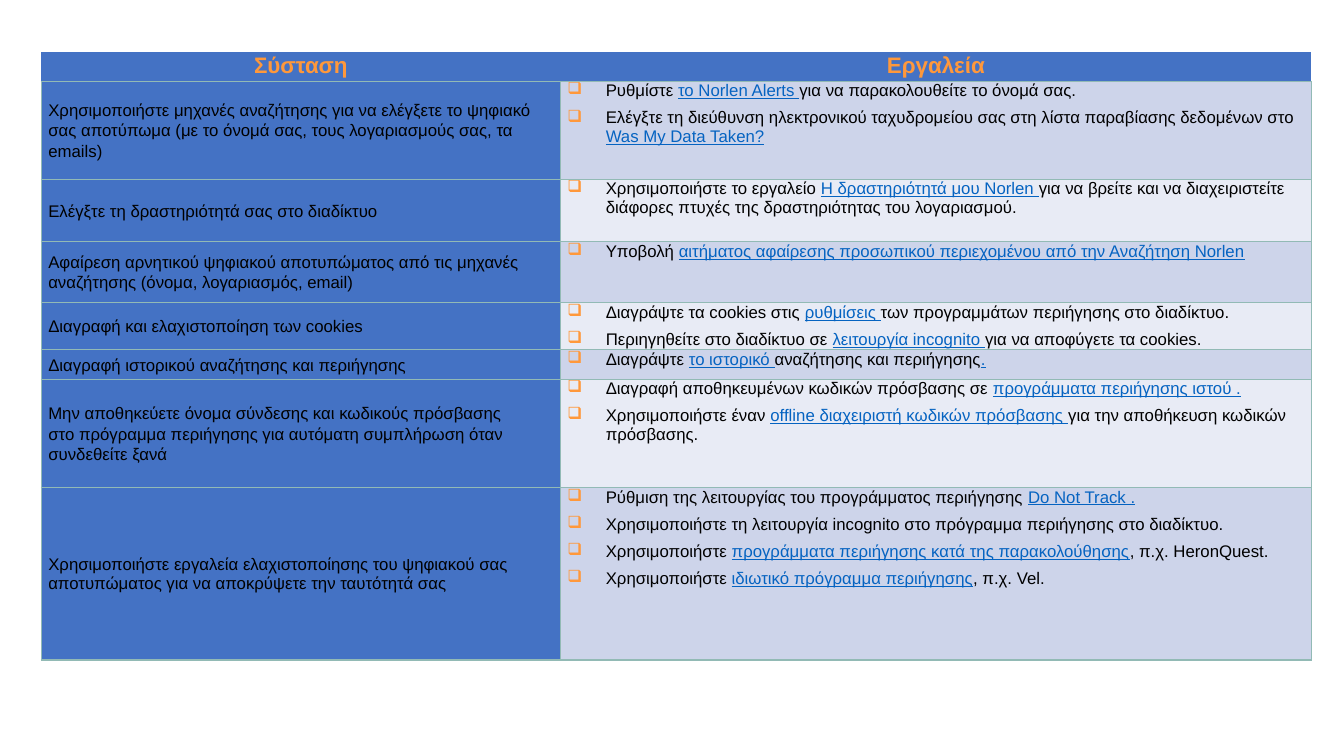
import pptx
import pptx.util
import pptx.dml.color
import pptx.enum.text
import pptx.oxml
import pptx.oxml.ns

Pt = pptx.util.Pt
ALIGN = pptx.enum.text.PP_ALIGN
ANCHOR = pptx.enum.text.MSO_ANCHOR

# Content: pieces between bars are shown as links
HEADERS = ["Σύσταση", "Εργαλεία"]
ROWS = [
    ("Χρησιμοποιήστε μηχανές αναζήτησης για να ελέγξετε το ψηφιακό σας αποτύπωμα "
     "(με το όνομά σας, τους λογαριασμούς σας, τα emails)",
     ["Ρυθμίστε |το Norlen Alerts |για να παρακολουθείτε το όνομά σας.",
      "Ελέγξτε τη διεύθυνση ηλεκτρονικού ταχυδρομείου σας στη λίστα παραβίασης "
      "δεδομένων στο |Was My Data Taken?|"]),
    ("Ελέγξτε τη δραστηριότητά σας στο διαδίκτυο",
     ["Χρησιμοποιήστε το εργαλείο |Η δραστηριότητά μου Norlen |για να βρείτε και να "
      "διαχειριστείτε διάφορες πτυχές της δραστηριότητας του λογαριασμού."]),
    ("Αφαίρεση αρνητικού ψηφιακού αποτυπώματος από τις μηχανές αναζήτησης "
     "(όνομα, λογαριασμός, email)",
     ["Υποβολή |αιτήματος αφαίρεσης προσωπικού περιεχομένου από την Αναζήτηση Norlen|"]),
    ("Διαγραφή και ελαχιστοποίηση των cookies",
     ["Διαγράψτε τα cookies στις |ρυθμίσεις |των προγραμμάτων περιήγησης στο διαδίκτυο.",
      "Περιηγηθείτε στο διαδίκτυο σε |λειτουργία incognito |για να αποφύγετε τα cookies."]),
    ("Διαγραφή ιστορικού αναζήτησης και περιήγησης",
     ["Διαγράψτε |το ιστορικό |αναζήτησης και περιήγησης|.|"]),
    ("Μην αποθηκεύετε όνομα σύνδεσης και κωδικούς πρόσβασης \n"
     "στο πρόγραμμα περιήγησης για αυτόματη συμπλήρωση όταν συνδεθείτε ξανά",
     ["Διαγραφή αποθηκευμένων κωδικών πρόσβασης σε |προγράμματα περιήγησης ιστού .|",
      "Χρησιμοποιήστε έναν |offline διαχειριστή κωδικών πρόσβασης |για την αποθήκευση "
      "κωδικών πρόσβασης."]),
    ("Χρησιμοποιήστε εργαλεία ελαχιστοποίησης του ψηφιακού σας αποτυπώματος "
     "για να αποκρύψετε την ταυτότητά σας",
     ["Ρύθμιση της λειτουργίας του προγράμματος περιήγησης |Do Not Track .|",
      "Χρησιμοποιήστε τη λειτουργία incognito στο πρόγραμμα περιήγησης στο διαδίκτυο.",
      "Χρησιμοποιήστε |προγράμματα περιήγησης κατά της παρακολούθησης|, π.χ. HeronQuest.",
      "Χρησιμοποιήστε |ιδιωτικό πρόγραμμα περιήγησης|, π.χ. Vel."]),
]
COLORS = {"blue": "4472C4", "orange": "FF983B", "text": "000000", "link": "0563C1",
          "dark_band": "CDD4EA", "light_band": "E8EBF5", "border": "92BAB5"}
COL_WIDTHS = [370.8, 536.4]
ROW_HEIGHTS = [21, 70, 44.6, 43.6, 33.6, 21, 77.5, 123]
LEFT, TOP = 29.5, 37.2
INDENT = 27.4
LINE_SPACING = 1.07
NO_GRID_STYLE = "{2D5ABB26-0587-4C30-8999-92F81FD0307C}"


def xml(text):
    return pptx.oxml.parse_xml(text.replace(" ", f" {pptx.oxml.ns.nsdecls('a')} ", 1))


def rgb(name):
    return pptx.dml.color.RGBColor.from_string(COLORS[name])


def format_cell(cell, fill, sides, anchor):
    cell.margin_left = cell.margin_right = Pt(5)
    cell.margin_top = cell.margin_bottom = 0
    cell.vertical_anchor = anchor
    tcPr = cell._tc.get_or_add_tcPr()
    for side in sides:
        tcPr.append(xml(f'<a:ln{side} w="{Pt(1)}"><a:solidFill><a:srgbClr '
                        f'val="{COLORS["border"]}"/></a:solidFill></a:ln{side}>'))
    cell.fill.solid()
    cell.fill.fore_color.rgb = rgb(fill)


def add_run(p, text, color="text", size=12, bold=False, underline=False):
    r = p.add_run()
    r.text = text
    r.font.name = "Arial"
    r.font.size = Pt(size)
    r.font.bold = bold
    r.font.underline = underline
    r.font.color.rgb = rgb(color)


def add_bullet(p):
    pPr = p._p.get_or_add_pPr()
    pPr.set("marL", str(Pt(INDENT)))
    pPr.set("indent", str(-Pt(INDENT)))
    pPr.append(xml(f'<a:buClr ><a:srgbClr val="{COLORS["orange"]}"/></a:buClr>'))
    pPr.append(xml('<a:buChar char="❑"/>'))


prs = pptx.Presentation()
prs.slide_width, prs.slide_height = Pt(960), Pt(540)
s = prs.slides.add_slide(prs.slide_layouts[6])

# Table grid
frame = s.shapes.add_table(len(ROW_HEIGHTS), len(COL_WIDTHS), Pt(LEFT), Pt(TOP),
                           Pt(sum(COL_WIDTHS)), Pt(sum(ROW_HEIGHTS)))
table = frame.table
table.first_row = table.horz_banding = False
table._tbl.tblPr.find(pptx.oxml.ns.qn("a:tableStyleId")).text = NO_GRID_STYLE
for col, width in zip(table.columns, COL_WIDTHS):
    col.width = Pt(width)
for row, height in zip(table.rows, ROW_HEIGHTS):
    row.height = Pt(height)

# Header row
for c, title in enumerate(HEADERS):
    cell = table.cell(0, c)
    format_cell(cell, "blue", "B", ANCHOR.TOP)
    p = cell.text_frame.paragraphs[0]
    p.alignment = ALIGN.CENTER
    p.line_spacing = LINE_SPACING
    add_run(p, title, "orange", 16, bold=True)

# Recommendations and their tools
for i, (advice, tools) in enumerate(ROWS, 1):
    cell = table.cell(i, 0)
    format_cell(cell, "blue", "LRTB", ANCHOR.MIDDLE)
    p = cell.text_frame.paragraphs[0]
    p.line_spacing = LINE_SPACING if i < len(ROWS) else 1.0
    for k, line in enumerate(advice.split("\n")):
        if k:
            p.add_line_break()
        add_run(p, line)

    cell = table.cell(i, 1)
    format_cell(cell, "dark_band" if i % 2 else "light_band", "LRTB", ANCHOR.TOP)
    tf = cell.text_frame
    for n, tool in enumerate(tools):
        p = tf.add_paragraph() if n else tf.paragraphs[0]
        p.space_before = Pt(6 if n else 0)
        add_bullet(p)
        for k, piece in enumerate(tool.split("|")):
            is_link = k % 2 == 1
            if piece:
                add_run(p, piece, "link" if is_link else "text", underline=is_link)

prs.save("out.pptx")
